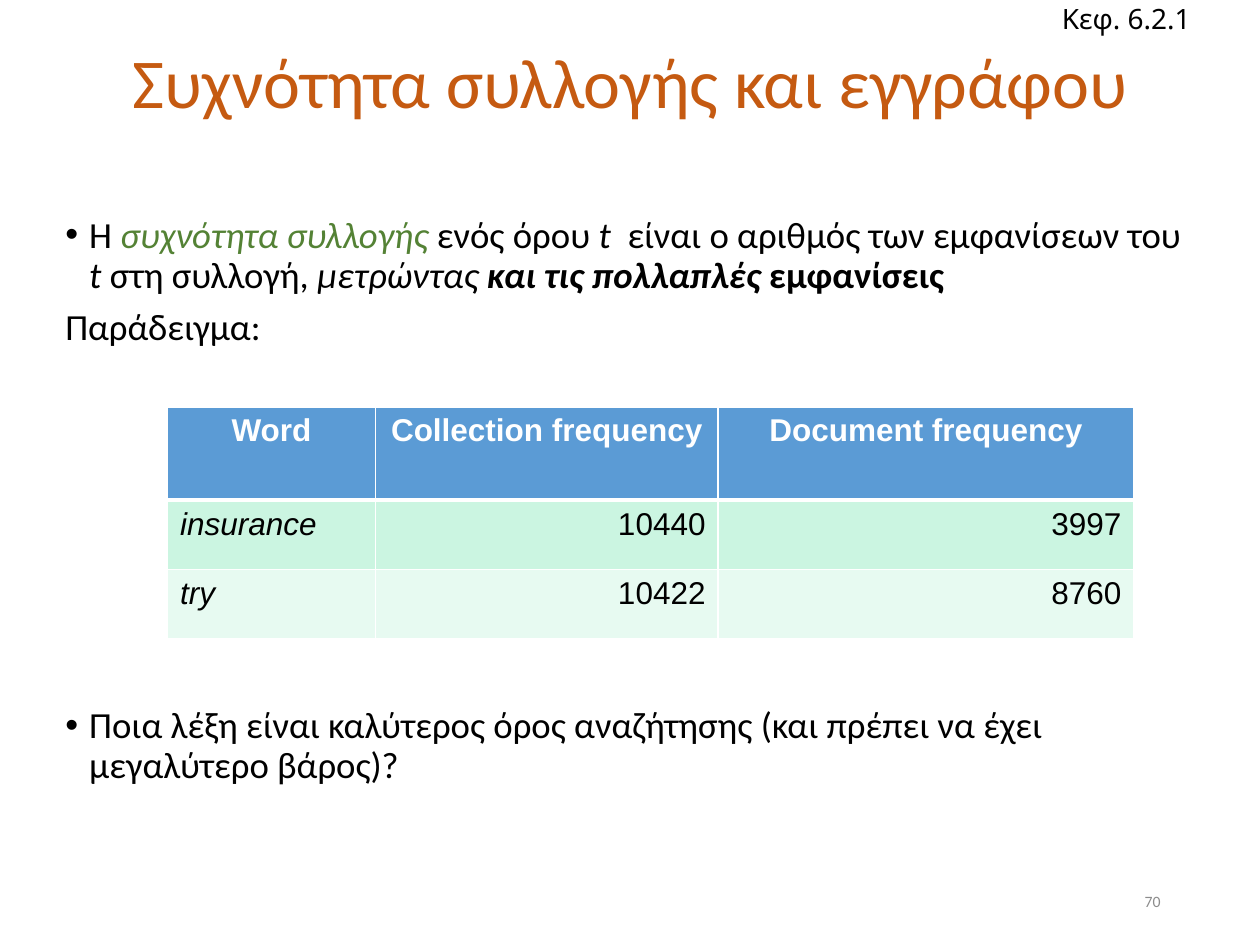
import pptx
import pptx.dml.color
import pptx.enum.text
import pptx.oxml
import pptx.oxml.ns
import pptx.util
from pptx.util import Inches

ALIGN = pptx.enum.text.PP_ALIGN
ANCHOR = pptx.enum.text.MSO_ANCHOR


def colour(value):
    return pptx.dml.color.RGBColor.from_string(value)


def element(xml):
    return pptx.oxml.parse_xml(xml.replace(" ", f" {pptx.oxml.ns.nsdecls('a')} ", 1))


class Slide:
    """Holds the text style and the page being built."""

    font = "Calibri"
    ink = "000000"
    accent = "548235"
    line = "FFFFFF"

    def __init__(self, deck):
        self.page = deck.slides.add_slide(deck.slide_layouts[6])

    def style(self, para, size, font=None, ink=None, align=ALIGN.LEFT):
        para.alignment = align
        para.font.size = pptx.util.Pt(size)
        para.font.name = font or self.font
        para.font.color.rgb = colour(ink or self.ink)

    def box(self, left, top, width, height, anchor=ANCHOR.TOP):
        box = self.page.shapes.add_textbox(
            Inches(left), Inches(top), Inches(width), Inches(height))
        box.text_frame.word_wrap = True
        box.text_frame.vertical_anchor = anchor
        return box.text_frame

    def label(self, text, place, size, **style):
        para = self.box(*place, anchor=ANCHOR.MIDDLE).paragraphs[0]
        para.text = text
        self.style(para, size, **style)
        return para

    def body(self, place, paragraphs):
        frame = self.box(*place)
        for index, (bullet, spans) in enumerate(paragraphs):
            para = frame.add_paragraph() if index else frame.paragraphs[0]
            para.line_spacing = 0.9
            para.space_before = pptx.util.Pt(7.5)
            self.style(para, 21)
            if bullet:
                self.bullet(para)
            for text, marks in spans:
                span = para.add_run()
                span.text = text
                span.font.italic = "i" in marks
                span.font.bold = "b" in marks
                if "a" in marks:
                    span.font.color.rgb = colour(self.accent)

    def bullet(self, para):
        properties = para._p.get_or_add_pPr()
        properties.set("marL", str(Inches(0.19)))
        properties.set("indent", str(-Inches(0.19)))
        fill = properties.find(pptx.oxml.ns.qn("a:defRPr"))
        fill.addprevious(element('<a:buFont typeface="Arial"/>'))
        fill.addprevious(element('<a:buChar char="•"/>'))

    def border(self, cell, top, bottom):
        properties = cell._tc.get_or_add_tcPr()
        for side, width in zip("LRTB", (1, 1, top, bottom)):
            properties.append(element(
                f'<a:ln{side} w="{pptx.util.Pt(width)}"><a:solidFill>'
                f'<a:srgbClr val="{self.line}"/></a:solidFill></a:ln{side}>'))

    def table(self, place, widths, heights, fills, rows):
        table = self.page.shapes.add_table(
            len(rows), len(widths), *map(Inches, place)).table
        for column, width in zip(table.columns, widths):
            column.width = Inches(width)
        for r, values in enumerate(rows):
            table.rows[r].height = Inches(heights[r])
            for c, value in enumerate(values):
                cell = table.cell(r, c)
                self.border(cell, 3 if r == 1 else 1, 3 if r == 0 else 1)
                cell.fill.solid()
                cell.fill.fore_color.rgb = colour(fills[r])
                cell.text = value
                para = cell.text_frame.paragraphs[0]
                header = r == 0
                align = ALIGN.CENTER if header else ALIGN.RIGHT if c else ALIGN.LEFT
                self.style(para, 18, "Arial", "FFFFFF" if header else self.ink, align)
                para.font.bold = header
                para.font.italic = not header and c == 0


def main():
    deck = pptx.Presentation()
    deck.slide_width, deck.slide_height = Inches(10), Inches(7.5)
    slide = Slide(deck)
    title = slide.label("Συχνότητα συλλογής και εγγράφου", (0.69, -0.04, 8.62, 1.45),
                        40, ink="C55A11", align=ALIGN.CENTER)
    title.line_spacing = 0.9
    slide.body((0.42, 1.67, 9.17, 1.3), [
        (True, [("Η ", ""), ("συχνότητα συλλογής ", "ia"), ("ενός όρου ", ""),
                ("t ", "i"), (" είναι ο αριθμός των εμφανίσεων του ", ""),
                ("t ", "i"), ("στη συλλογή, ", ""), ("μετρώντας ", "i"),
                ("και τις πολλαπλές ", "ib"), ("εμφανίσεις", "b")]),
        (False, [("Παράδειγμα:", "")]),
    ])
    slide.body((0.42, 5.56, 9.17, 0.85), [
        (True, [("Ποια λέξη είναι καλύτερος όρος αναζήτησης "
                 "(και πρέπει να έχει μεγαλύτερο βάρος)?", "")]),
    ])
    slide.label("70", (7.06, 6.95, 2.25, 0.4), 9, ink="8C8C8C", align=ALIGN.RIGHT)
    slide.table((1.33, 3.23, 7.67, 1.84), (1.65, 2.72, 3.3), (0.74, 0.55, 0.55),
                ("5B9BD5", "CBF5E1", "E7FAF1"), [
                    ("Word", "Collection frequency", "Document frequency"),
                    ("insurance", "10440", "3997"),
                    ("try", "10422", "8760"),
                ])
    slide.label("Κεφ. 6.2.1", (8.33, -0.04, 1.31, 0.37), 16, font="Noto Sans")
    deck.save("out.pptx")


if __name__ == "__main__":
    main()
